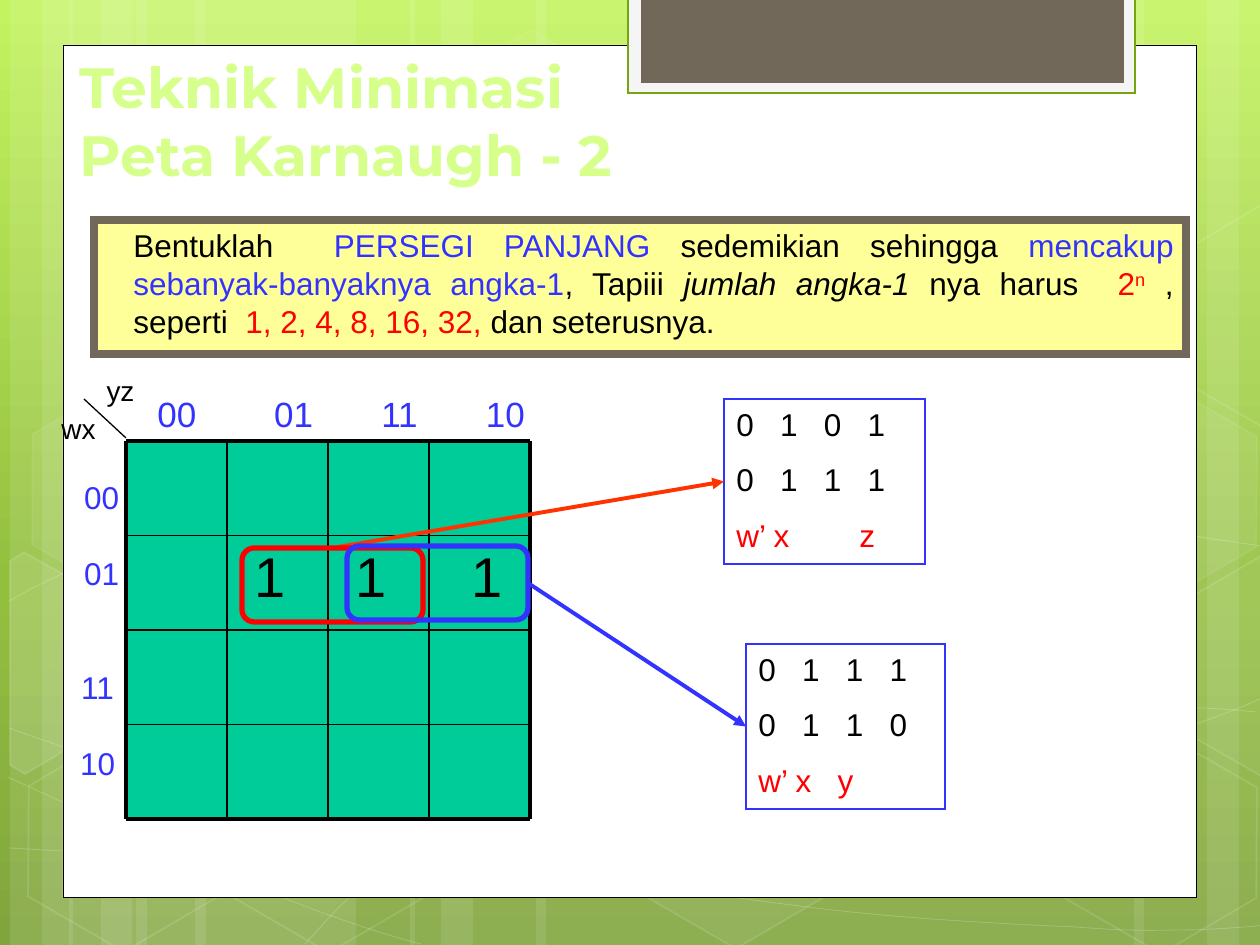
"""Build the slide on grouping ones in a Karnaugh map."""
import copy
import lxml.etree
import pptx
import pptx.dml.color
import pptx.enum.dml
import pptx.enum.shapes
import pptx.enum.text
import pptx.oxml.ns
import pptx.util

qn = pptx.oxml.ns.qn
SHAPE = pptx.enum.shapes.MSO_SHAPE
ALIGN = pptx.enum.text.PP_ALIGN
ANCHOR = pptx.enum.text.MSO_ANCHOR
PX = 914400 / 126


class Theme:
    white, black, red, blue = "FFFFFF", "000000", "FF0000", "3333FF"
    lime, brown, yellow, cell = "D6FF8C", "71685A", "FFFF99", "00CC99"
    tab, tab_edge, arrow = "F5F5F5", "74A510", "FF3300"
    backdrop = [(0, "C3F35F"), (62, "93BF3F"), (100, "81A53E")]
    title, one, head, body, axis = 32.4, 32, 20, 18, 16
    font, title_font, space_width = "Arial", "Montserrat", 0.278


BANDS = [(136, 220), (10, 63), (42, 105), (195, 220), (69, 63), (101, 105),
         (924, 220), (1207, 63), (1134, 105), (536, 388), (410, 63), (441, 105)]
CURVES = [
    [(9, 848), (77, 852), (145, 856), (239, 854), (334, 853), (451, 851), (577, 838),
     (703, 825), (882, 801), (998, 777), (1113, 753), (1231, 716), (1269, 694)],
    [(9, 601), (45, 581), (82, 562), (152, 543), (224, 524), (326, 496), (437, 488),
     (549, 479), (685, 478), (824, 488), (963, 498), (1193, 537), (1269, 547)],
    [(8, 777), (160, 847), (311, 916), (421, 944)],
    [(9, 728), (48, 742), (88, 756), (161, 776), (234, 795), (344, 827), (450, 848),
     (554, 869), (687, 892), (791, 905), (896, 919), (1008, 924), (1075, 927),
     (1140, 932), (1158, 930), (1191, 930), (1223, 929), (1246, 927), (1269, 925)],
    [(305, 944), (328, 919), (350, 893), (381, 871), (411, 848), (454, 823), (489, 805),
     (524, 787), (546, 780), (592, 767), (638, 755), (722, 737), (766, 728),
     (811, 719), (818, 719), (857, 717), (896, 713), (958, 709), (1000, 708),
     (1045, 707), (1116, 708), (1116, 708), (1144, 708), (1173, 708), (1201, 708),
     (1223, 709), (1245, 711), (1256, 712)],
]
HEXAGONS = [(421, 45, 4, 8), (626, 742, 6, 12), (14, 745, 0, 12), (18, 393, 7, 8),
            (219, 746, 0, 12), (949, 571, 10, 12), (1051, 747, 0, 12), (1051, 396, 7, 8)]
CUT_HEXAGONS = [
    ([(10, 561), (24, 552), (121, 607), (120, 718), (25, 774), (10, 765)], 10),
    ([(1167, 611), (1261, 556), (1271, 562), (1271, 772), (1263, 777), (1167, 722)], 4),
    ([(1167, 261), (1261, 205), (1273, 212), (1271, 422), (1263, 427), (1167, 372)], 0),
]
TITLE = "Teknik Minimasi\vPeta Karnaugh - 2"
RULE = [("Bentuklah  ", Theme.black), ("PERSEGI PANJANG", Theme.blue),
        (" sedemikian sehingga ", Theme.black),
        ("mencakup sebanyak-banyaknya angka-1", Theme.blue), (", Tapiii ", Theme.black),
        ("jumlah angka-1", Theme.black, "italic"), (" nya harus  ", Theme.black),
        ("2", Theme.red), ("n", Theme.red, "super"), (" , seperti  ", Theme.black),
        ("1, 2, 4, 8, 16, 32,", Theme.red), (" dan seterusnya.", Theme.black)]
MAP = [["", "", "", ""], ["", "1 ", "1 ", " 1"], ["", "", "", ""], ["", "", "", ""]]
MAP_LEFT, MAP_TOP, CELL_W, CELL_H = 126, 441, 101, 94.5
COLUMNS, COLUMN_GAPS = ["00", "01", "11", "10"], [8, 7, 7]
ROW_LABELS = [((67, 472, 69, 126), ["00", "01"]), ((63, 662, 69, 126), ["11", "10"])]
AXES = [((84, 367, 73, 47), "yz"), ((42, 405, 73, 47), "wx")]
BIT_GAPS = [3, 3, 3]
GROUPS = [
    {"box": (724, 399, 201, 165), "ring": (242, 548, 181, 74), "site": 0,
     "color": Theme.red, "arrow": Theme.arrow,
     "bits": ["0101", "0111"], "term": ["w’ x", "z"], "term_gaps": [8]},
    {"box": (746, 644, 199, 165), "ring": (347, 546, 181, 74), "site": 3,
     "color": Theme.blue, "arrow": Theme.blue,
     "bits": ["0111", "0110"], "term": ["w’ x", "y"], "term_gaps": [3]},
]


def emu(*values):
    return [round(v * PX) for v in values]


def rgb(color):
    return pptx.dml.color.RGBColor.from_string(color)


def paint(fill, color, alpha=100):
    if not color or not alpha:
        fill.background()
        return
    fill.solid()
    fill.fore_color.rgb = rgb(color)
    if alpha < 100:
        clr = fill._xPr.find(qn("a:solidFill"))[0]
        lxml.etree.SubElement(clr, qn("a:alpha")).set("val", str(alpha * 1000))


def dress(sp, fill=None, line=None, width=1, fill_alpha=100, line_alpha=100):
    sp.shadow.inherit = False
    paint(sp.fill, fill, fill_alpha)
    paint(sp.line.fill, line, line_alpha)
    if line:
        sp.line.width = pptx.util.Pt(width)
        lxml.etree.SubElement(sp.line._get_or_add_ln(), qn("a:miter"), lim="800000")
    return sp


def shape(s, box, kind=SHAPE.RECTANGLE, **style):
    return dress(s.shapes.add_shape(kind, *emu(*box)), **style)


def outline(s, points, close, **style):
    fb = s.shapes.build_freeform(*points[0], scale=PX)
    fb.add_line_segments(points[1:], close=close)
    return dress(fb.convert_to_shape(), **style)


def curve(s, points, **style):
    sp = outline(s, points, False, **style)
    steps = sp._element.findall(".//" + qn("a:lnTo"))
    for i in range(0, len(steps), 3):
        bend = lxml.etree.Element(qn("a:cubicBezTo"))
        steps[i].addprevious(bend)
        for step in steps[i:i + 3]:
            bend.append(step[0])
            step.getparent().remove(step)


def line(s, ends, color, width):
    cn = s.shapes.add_connector(pptx.enum.shapes.MSO_CONNECTOR.STRAIGHT, *emu(*ends))
    cn.line.color.rgb = rgb(color)
    cn.line.width = pptx.util.Pt(width)
    lxml.etree.SubElement(cn._element.spPr, qn("a:effectLst"))
    return cn


def indent(p, left):
    pPr = p._p.get_or_add_pPr()
    pPr.set("marL", str(emu(left)[0]))
    pPr.set("indent", "0")


def spread(p, words, gaps, size):
    for word, gap in zip(words, [*gaps, None]):
        p.add_run().text = word
        if gap:
            r = p.add_run()
            r.text = " "
            spacing = round((gap - 1) * size * Theme.space_width * 100)
            r._r.get_or_add_rPr().set("spc", str(spacing))


def write(sp, lines, size, color, align=ALIGN.LEFT, anchor=ANCHOR.TOP, gap=0, font=Theme.font):
    tf = sp.text_frame
    tf.word_wrap, tf.vertical_anchor = True, anchor
    for i, text in enumerate(lines):
        p = tf.paragraphs[0] if i == 0 else tf.add_paragraph()
        p.text, p.alignment = text, align
        p.space_before = pptx.util.Pt(gap if i else 0)
        p.font.size, p.font.name = pptx.util.Pt(size), font
        p.font.color.rgb = rgb(color)
    return tf.paragraphs


def label(s, box, lines, size, color, **style):
    return write(s.shapes.add_textbox(*emu(*box)), lines, size, color, **style)


def draw_backdrop(s):
    fill = s.background.fill
    fill.gradient()
    fill.gradient_angle = 270
    stops = s._element.find(".//" + qn("a:gsLst"))
    stops.insert(1, copy.deepcopy(stops[0]))
    for stop, (position, color) in zip(fill.gradient_stops, Theme.backdrop):
        stop.position, stop.color.rgb = position / 100, rgb(color)
    for left, width in BANDS:
        shape(s, (left, 0, width, 945), fill=Theme.white, fill_alpha=10)
    for points in CURVES:
        curve(s, points, line=Theme.white, width=0.5, line_alpha=20)
    for left, top, inside, edge in HEXAGONS:
        sp = shape(s, (left, top, 220, 192), SHAPE.HEXAGON, fill=Theme.white,
                   line=Theme.white, fill_alpha=inside, line_alpha=edge)
        sp.adjustments[0], sp.rotation = 0.285, 30
    for points, inside in CUT_HEXAGONS:
        outline(s, points, True, fill=Theme.white, line=Theme.white,
                fill_alpha=inside, line_alpha=12)
    shape(s, (63, 45, 1134, 853), fill=Theme.white, line=Theme.black, width=0.5)
    shape(s, (628, -3, 507, 96), fill=Theme.tab, line=Theme.tab_edge, width=1.25)
    shape(s, (641, -3, 483, 86), fill=Theme.brown)


def draw_rule(s):
    sp = shape(s, (94, 220, 1092, 134), fill=Theme.yellow, line=Theme.brown, width=4.5)
    p = write(sp, [""], Theme.body, Theme.black, ALIGN.JUSTIFY)[0]
    indent(p, 27)
    for text, color, *style in RULE:
        r = p.add_run()
        r.text, r.font.color.rgb = text, rgb(color)
        if "italic" in style:
            r.font.italic = True
        if "super" in style:
            r._r.get_or_add_rPr().set("baseline", "30000")


def draw_map(s):
    for row, values in enumerate(MAP):
        for col, value in enumerate(values):
            sp = shape(s, (MAP_LEFT + col * CELL_W, MAP_TOP + row * CELL_H, CELL_W, CELL_H),
                       fill=Theme.cell)
            if value:
                write(sp, [value], Theme.one, Theme.black, ALIGN.CENTER)
    n = len(MAP)
    right, bottom = MAP_LEFT + n * CELL_W, MAP_TOP + n * CELL_H
    for i in range(n + 1):
        x, y = MAP_LEFT + i * CELL_W, MAP_TOP + i * CELL_H
        width = 2.25 if i in (0, n) else 1
        line(s, (MAP_LEFT, y, right, y), Theme.black, width)
        line(s, (x, MAP_TOP, x, bottom), Theme.black, width)
    p = label(s, (126, 386, 415, 54), [""], Theme.head, Theme.blue)[0]
    indent(p, 19)
    spread(p, COLUMNS, COLUMN_GAPS, Theme.head)
    line(s, (126, 438, 84, 399), Theme.black, 0.75)
    for box, lines in ROW_LABELS:
        label(s, box, lines, Theme.body, Theme.blue, align=ALIGN.CENTER, gap=22)
    for box, name in AXES:
        label(s, box, [name], Theme.axis, Theme.black, align=ALIGN.CENTER)


def draw_group(s, group):
    box = shape(s, group["box"], line=Theme.blue, width=0.75)
    *bits, term = write(box, [""] * 3, Theme.body, Theme.black, gap=10)
    for p, row in zip(bits, group["bits"]):
        spread(p, row, BIT_GAPS, Theme.body)
    spread(term, group["term"], group["term_gaps"], Theme.body)
    term.font.color.rgb = rgb(Theme.red)
    arrow = line(s, (0, 0, 0, 0), group["arrow"], 2.25)
    lxml.etree.SubElement(arrow.line._get_or_add_ln(), qn("a:tailEnd"), type="triangle")
    ring = shape(s, group["ring"], SHAPE.ROUNDED_RECTANGLE, line=group["color"], width=3)
    arrow.begin_connect(ring, group["site"])
    arrow.end_connect(box, 1)


def main():
    prs = pptx.Presentation()
    prs.slide_width, prs.slide_height = emu(1260, 945)
    s = prs.slides.add_slide(prs.slide_layouts[6])
    draw_backdrop(s)
    p = label(s, (67, 116, 968, 78), [TITLE], Theme.title, Theme.lime,
              anchor=ANCHOR.BOTTOM, font=Theme.title_font)[0]
    p.font.bold = True
    draw_rule(s)
    draw_map(s)
    for group in GROUPS:
        draw_group(s, group)
    prs.save("out.pptx")


if __name__ == "__main__":
    main()
